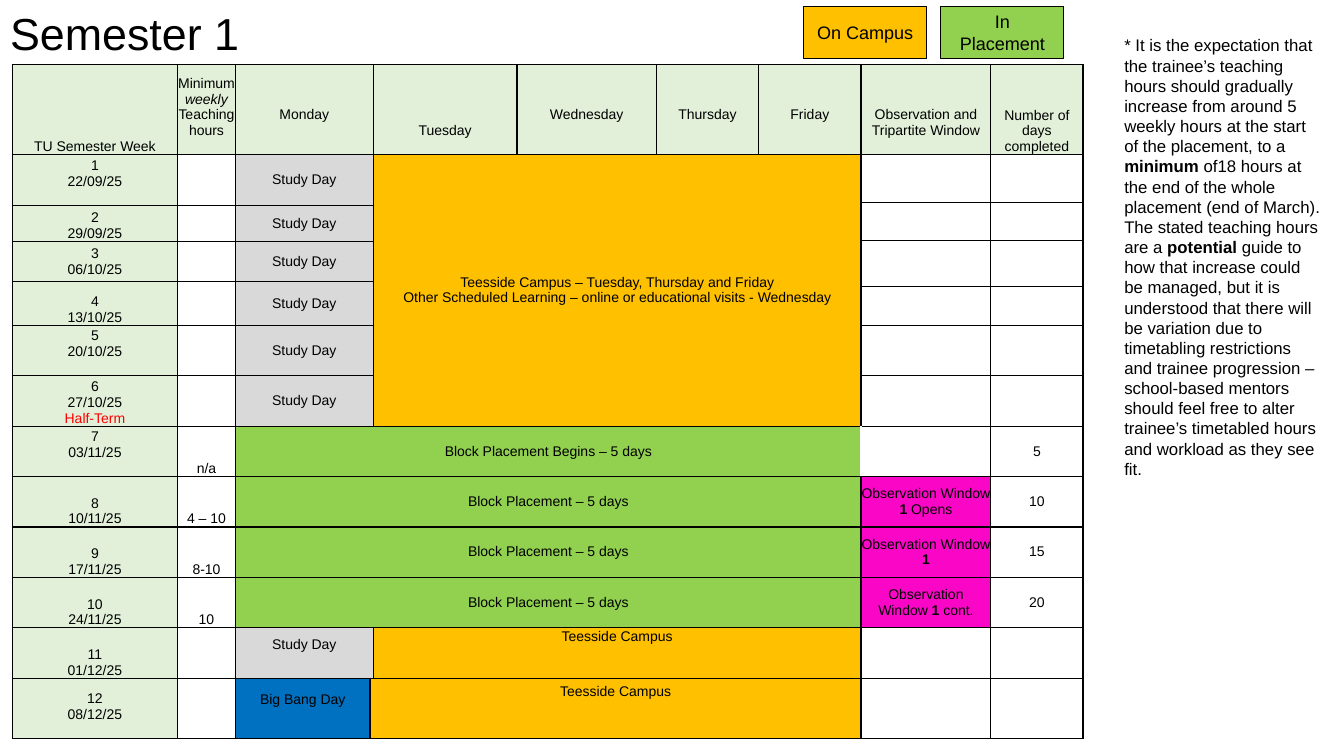
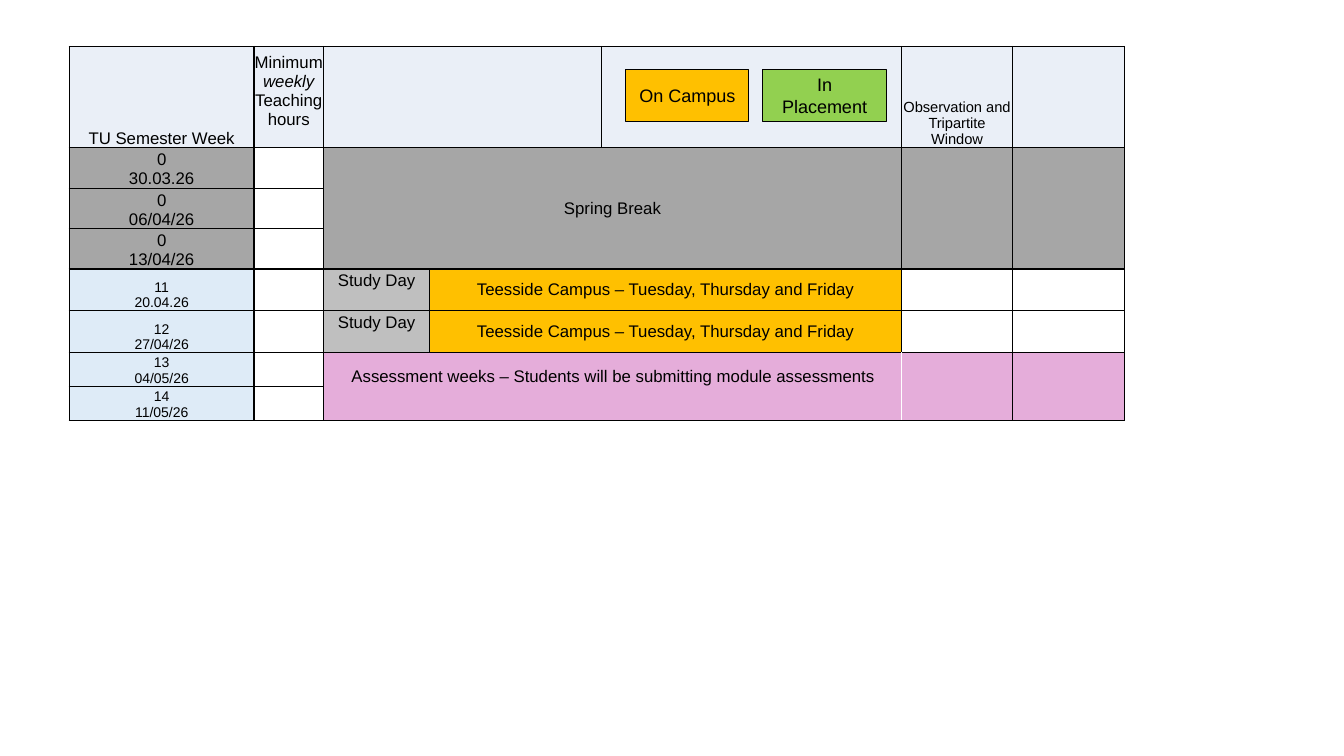
from pptx import Presentation
from pptx.dml.color import RGBColor
from pptx.enum.shapes import MSO_SHAPE
from pptx.enum.text import MSO_ANCHOR, MSO_AUTO_SIZE, PP_ALIGN
from pptx.oxml.ns import qn
from pptx.util import Pt
from lxml.etree import SubElement

COLORS = {
    "black": "000000", "white": "FFFFFF", "red": "FF0000",
    "campus": "FFC000", "placement": "92D050", "study": "D9D9D9",
    "week": "E2F0D9", "observation": "FA06C6", "event": "0070C0",
    "header": "EAEFF7", "spring_week": "DEEBF7", "break": "A6A6A6",
    "spring_study": "BFBFBF", "assessment": "E5ADDA",
}
FONT = "Arial"
LINE_HEIGHT = 1.15
BOTTOM, MIDDLE = MSO_ANCHOR.BOTTOM, MSO_ANCHOR.MIDDLE


def rgb(name):
    return RGBColor.from_string(COLORS[name])


def write(tf, lines, size, align=PP_ALIGN.LEFT, emphasis="bold"):
    """Write one paragraph per line; parts between bars get the emphasis."""
    for i, line in enumerate(lines):
        p = tf.paragraphs[0] if i == 0 else tf.add_paragraph()
        p.alignment = align
        p.font.name, p.font.size = FONT, Pt(size)
        p.font.color.rgb = rgb("black")
        for j, part in enumerate(line.split("|")):
            if not part:
                continue
            r = p.add_run()
            r.text = part
            if j % 2 and emphasis == "red":
                r.font.color.rgb = rgb("red")
            elif j % 2:
                setattr(r.font, emphasis, True)


def add_legend(slide, left, top):
    for i, (label, color) in enumerate([("On Campus", "campus"),
                                        ("In Placement", "placement")]):
        sp = slide.shapes.add_shape(MSO_SHAPE.RECTANGLE, Pt(left + 98 * i),
                                    Pt(top), Pt(88), Pt(37))
        sp.shadow.inherit = False
        sp.fill.solid()
        sp.fill.fore_color.rgb = rgb(color)
        sp.line.color.rgb = rgb("black")
        sp.line.width = Pt(0.75)
        sp.text_frame.word_wrap = True
        sp.text_frame.vertical_anchor = MIDDLE
        write(sp.text_frame, [label], 12.9, PP_ALIGN.CENTER)


def add_grid(slide, left, top, widths, heights):
    """Add a table of empty white cells with black borders."""
    table = slide.shapes.add_table(
        len(heights), len(widths), Pt(left), Pt(top),
        Pt(sum(widths)), Pt(sum(heights))).table
    table.first_row = table.horz_banding = False
    for column, width in zip(table.columns, widths):
        column.width = Pt(width)
    for row, height in zip(table.rows, heights):
        row.height = Pt(height)
    for cell in table.iter_cells():
        cell.margin_left = cell.margin_right = Pt(0)
        cell.margin_top = cell.margin_bottom = Pt(0)
        for side in "LRTB":
            ln = SubElement(cell._tc.tcPr, qn(f"a:ln{side}"), w=str(Pt(1)))
            fill = SubElement(ln, qn("a:solidFill"))
            SubElement(fill, qn("a:srgbClr"), val=COLORS["black"])
        cell.fill.solid()
        cell.fill.fore_color.rgb = rgb("white")
    return table


def put(table, row, col, lines, color="white", span=(1, 1), anchor=MIDDLE,
        size=10, lift=0, align=PP_ALIGN.CENTER, emphasis="bold"):
    """Fill a cell; lift raises its text by that many lines."""
    cell = table.cell(row, col)
    if span != (1, 1):
        cell.merge(table.cell(row + span[0] - 1, col + span[1] - 1))
    cell.fill.solid()
    cell.fill.fore_color.rgb = rgb(color)
    cell.vertical_anchor = anchor
    cell.margin_bottom = Pt(round(lift * size * LINE_HEIGHT, 2))
    write(cell.text_frame, lines, size, align, emphasis)
    return cell


def whiten_edge(table, rows, col):
    """Make the border between col and the next column white."""
    for row in rows:
        for c, side in ((col, "R"), (col + 1, "L")):
            ln = table.cell(row, c)._tc.tcPr.find(qn(f"a:ln{side}"))
            ln.find(".//" + qn("a:srgbClr")).set("val", COLORS["white"])


def shrink_empty_cells(table):
    """Keep empty cells from stretching low rows."""
    for cell in table.iter_cells():
        if not cell.text_frame.text:
            SubElement(cell.text_frame.paragraphs[0]._p,
                       qn("a:endParaRPr"), sz="100")


def add_autumn_table(slide):
    table = add_grid(
        slide, 8.8, 46,
        [118, 41.4, 96.2, 2.2, 102.8, 99.4, 73.2, 73.2, 92.6, 66],
        [64.3, 34.3, 2, 25, 1, 28.5, 3.5, 27.8] + [36] * 7 + [42.9])

    headers = [  # column, label, columns spanned, lift
        (0, "TU Semester Week", 1, 0),
        (1, "Minimum |weekly| Teaching hours", 1, 1),
        (2, "Monday", 2, 2), (4, "Tuesday", 1, 1), (5, "Wednesday", 1, 2),
        (6, "Thursday", 1, 2), (7, "Friday", 1, 2),
        (8, "Observation and Tripartite Window", 1, 1),
        (9, "Number of days completed", 1, 0),
    ]
    for col, label, cols, lift in headers:
        put(table, 0, col, [label], "week", (1, cols), BOTTOM, lift=lift,
            emphasis="italic")

    weeks = [  # first row, rows spanned, date, lift, teaching hours
        (1, 2, "22/09/25", 1, ""), (3, 2, "29/09/25", 0, ""),
        (5, 1, "06/10/25", 0.25, ""), (6, 2, "13/10/25", 0, ""),
        (8, 1, "20/10/25", 1, ""), (9, 1, "27/10/25", 0, ""),
        (10, 1, "03/11/25", 1, "n/a"), (11, 1, "10/11/25", 0, "4 – 10"),
        (12, 1, "17/11/25", 0, "8-10"), (13, 1, "24/11/25", 0, "10"),
        (14, 1, "01/12/25", 0, ""), (15, 1, "08/12/25", 1, ""),
    ]
    for number, (row, rows, date, lift, hours) in enumerate(weeks, 1):
        lines = [str(number), date]
        if number == 6:
            lines.append("|Half-Term|")
        put(table, row, 0, lines, "week", (rows, 1), BOTTOM, lift=lift,
            emphasis="red")
        put(table, row, 1, [hours] if hours else [], span=(rows, 1),
            anchor=BOTTOM)
        if number <= 6:
            put(table, row, 2, ["Study Day"], "study", (rows, 2))

    put(table, 1, 4, [
        "Teesside Campus – Tuesday, Thursday and Friday",
        "Other Scheduled Learning – online or educational visits - Wednesday",
    ], "campus", (9, 4))
    for row, rows in ((2, 2), (4, 3)):
        for col in (8, 9):
            put(table, row, col, [], span=(rows, 1))

    for i, row in enumerate(range(10, 14)):
        begins = "" if i else " Begins"
        put(table, row, 2, [f"Block Placement{begins} – 5 days"],
            "placement", (1, 6))
        put(table, row, 9, [str(5 * (i + 1))])
    whiten_edge(table, [10], 7)
    windows = [["Observation Window |1| Opens"], ["Observation Window |1|"],
               ["Observation", "Window |1| cont."]]
    for row, lines in enumerate(windows, 11):
        put(table, row, 8, lines, "observation")

    put(table, 14, 2, ["Study Day"], "study", (1, 2), lift=1)
    put(table, 14, 4, ["Teesside Campus"], "campus", (1, 4), lift=2)
    put(table, 15, 2, ["Big Bang Day"], "event", lift=1)
    put(table, 15, 3, ["Teesside Campus"], "campus", (1, 5), lift=2)
    shrink_empty_cells(table)


def add_spring_table(slide):
    table = add_grid(slide, 49.5, 33.2,
                     [132, 49.6, 76, 122.4, 214.6, 79.2, 80],
                     [72.4] + [28.7] * 3 + [30] * 2 + [24] * 2)

    headers = [  # column, labels, columns spanned, size, lift
        (0, ["TU Semester Week"], 1, 12, 0),
        (1, ["Minimum |weekly| Teaching hours"], 1, 12, 1),
        (2, [], 2, 12, 0), (4, [], 1, 12, 0),
        (5, ["Observation and Tripartite Window"], 1, 10.5, 0),
        (6, [], 1, 12, 0),
    ]
    for col, labels, cols, size, lift in headers:
        put(table, 0, col, labels, "header", (1, cols), BOTTOM, size, lift,
            emphasis="italic")

    weeks = [("0", "30.03.26"), ("0", "06/04/26"), ("0", "13/04/26"),
             ("11", "20.04.26"), ("12", "27/04/26"), ("13", "04/05/26"),
             ("14", "11/05/26")]
    for row, week in enumerate(weeks, 1):
        color, size = ("break", 12) if week[0] == "0" else ("spring_week", 10)
        put(table, row, 0, week, color, anchor=BOTTOM, size=size)

    put(table, 1, 2, ["Spring Break"], "break", (3, 3), size=12)
    for row in (4, 5):
        put(table, row, 2, ["Study Day"], "spring_study", size=12, lift=1)
        put(table, row, 3, ["Teesside Campus – Tuesday, Thursday and Friday"],
            "campus", (1, 2), size=12)
    cell = put(
        table, 6, 2,
        ["Assessment weeks – Students will be submitting module assessments"],
        "assessment", (2, 3), size=12, lift=1, align=PP_ALIGN.LEFT)
    cell.margin_left = Pt(20)
    for col in (5, 6):
        put(table, 1, col, [], "break", (3, 1))
        put(table, 6, col, [], "assessment", (2, 1))
    whiten_edge(table, (6, 7), 4)
    shrink_empty_cells(table)


def add_title(slide, text):
    sp = slide.shapes.title
    sp.left, sp.top, sp.width, sp.height = Pt(0), Pt(0), Pt(468), Pt(46)
    tf = sp.text_frame
    tf.auto_size = MSO_AUTO_SIZE.NONE
    tf.vertical_anchor = MIDDLE
    write(tf, [text], 32)


def add_note(slide, text):
    tf = slide.shapes.add_textbox(Pt(796), Pt(21.6), Pt(155),
                                  Pt(327)).text_frame
    tf.word_wrap = True
    write(tf, [text], 12)


def main():
    prs = Presentation()
    prs.slide_width, prs.slide_height = Pt(960), Pt(540)

    slide = prs.slides.add_slide(prs.slide_layouts.get_by_name("Title Only"))
    add_title(slide, "Semester 1")
    add_note(slide, (
        "* It is the expectation that the trainee’s teaching hours should "
        "gradually increase from around 5 weekly hours at the start of the "
        "placement, to a |minimum| of18 hours at the end of the whole "
        "placement (end of March). The stated teaching hours are a "
        "|potential| guide to how that increase could be managed, but it is "
        "understood that there will be variation due to timetabling "
        "restrictions and trainee progression – school-based mentors should "
        "feel free to alter trainee’s timetabled hours and workload as they "
        "see fit."))
    add_autumn_table(slide)
    add_legend(slide, 574, 4.5)

    slide = prs.slides.add_slide(prs.slide_layouts.get_by_name("Blank"))
    add_spring_table(slide)
    add_legend(slide, 447, 49.5)

    prs.save("out.pptx")


if __name__ == "__main__":
    main()
